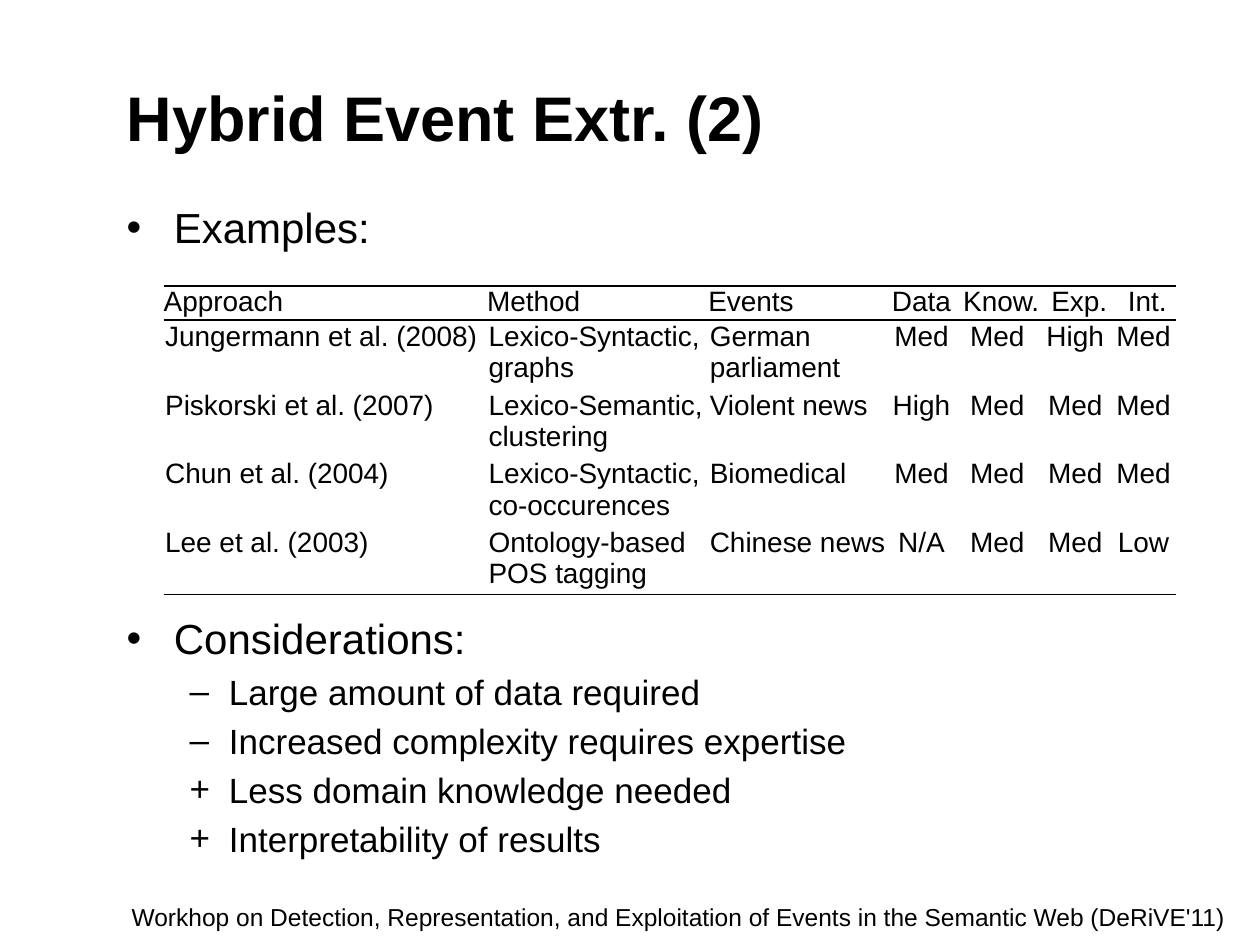
"""Build the slide on hybrid event extraction with its table of examples."""
from lxml.etree import SubElement
from pptx import Presentation
from pptx.dml.color import RGBColor
from pptx.enum.text import MSO_ANCHOR as Anchor, MSO_AUTO_SIZE as AutoSize, PP_ALIGN as Align
from pptx.oxml.ns import qn
from pptx.util import Cm, Pt


def place(shape, left, top, width, height):
    shape.left, shape.top, shape.width, shape.height = map(Cm, (left, top, width, height))


def set_font(text_part, size, color="000000", bold=False):
    font = text_part.font
    font.name, font.size, font.bold = "Arial", Pt(size), bold
    font.color.rgb = RGBColor.from_string(color)


presentation = Presentation()
presentation.slide_width, presentation.slide_height = Cm(25.4), Cm(19.05)
slide = presentation.slides.add_slide(presentation.slide_layouts[1])

title = slide.shapes.title
place(title, 2.3, 0.76, 21.84, 3.18)
title.text_frame.text = "Hybrid Event Extr. (2)"
title.text_frame.vertical_anchor = Anchor.MIDDLE
title.text_frame.auto_size = AutoSize.NONE
title.text_frame.paragraphs[0].alignment = Align.LEFT
set_font(title.text_frame.paragraphs[0], 36, bold=True)

bullets = [
    ("Examples:", 0, "•", 0),
    ("Considerations:", 0, "•", 206),
    ("Large amount of data required", 1, "–", 4),
    ("Increased complexity requires expertise", 1, "–", 4),
    ("Less domain knowledge needed", 1, "+", 4),
    ("Interpretability of results", 1, "+", 4),
]
body = slide.placeholders[1]
place(body, 2.3, 3.94, 21.84, 13.79)
body_frame = body.text_frame
body_frame.text = "\n".join(bullet[0] for bullet in bullets)
body_frame.auto_size = AutoSize.NONE
for paragraph, (_, level, symbol, space) in zip(body_frame.paragraphs, bullets):
    paragraph.level = level
    paragraph.space_before = Pt(space)
    indent, hanging = [(0.95, 0.95), (2.06, 0.79)][level]
    properties = paragraph._p.get_or_add_pPr()
    properties.set("marL", str(Cm(indent)))
    properties.set("indent", str(-Cm(hanging)))
    SubElement(properties, qn("a:buFont"), typeface="Arial")
    SubElement(properties, qn("a:buChar"), char=symbol)
    set_font(paragraph, 20 if level else 24)

footer = slide.shapes.add_textbox(Cm(2.18), Cm(18.06), Cm(23.01), Cm(0.61))
footer.text_frame.word_wrap = True
paragraph = footer.text_frame.paragraphs[0]
paragraph.text = (
    "Workhop on Detection, Representation, and Exploitation of Events "
    "in the Semantic Web (DeRiVE'11)"
)
paragraph.alignment = Align.CENTER
set_font(paragraph, 14)

rows = [
    ["Approach", "Method", "Events", "Data", "Know.", "Exp.", "Int."],
    ["Jungermann et al. (2008)", "Lexico-Syntactic, graphs", "German parliament",
     "Med", "Med", "High", "Med"],
    ["Piskorski et al. (2007)", "Lexico-Semantic, clustering", "Violent news",
     "High", "Med", "Med", "Med"],
    ["Chun et al. (2004)", "Lexico-Syntactic,\vco-occurences", "Biomedical",
     "Med", "Med", "Med", "Med"],
    ["Lee et al. (2003)", "Ontology-based POS tagging", "Chinese news",
     "N/A", "Med", "Med", "Low"],
]
column_widths = [6.52, 4.46, 3.61, 1.37, 1.69, 1.45, 1.3]
row_heights = [0.4] + [0.53] * 4
table = slide.shapes.add_table(
    len(rows), len(column_widths), Cm(3.3), Cm(5.77),
    Cm(sum(column_widths)), Cm(sum(row_heights)),
).table
table.first_row = table.horz_banding = False
for column, width in zip(table.columns, column_widths):
    column.width = Cm(width)
for row, height in zip(table.rows, row_heights):
    row.height = Cm(height)

for row_index, row in enumerate(rows):
    ruled_sides = {0: ("lnT", "lnB"), 1: ("lnT",), len(rows) - 1: ("lnB",)}.get(row_index, ())
    margin = Cm(0.03 if row_index else 0)
    for column_index, text in enumerate(row):
        cell = table.cell(row_index, column_index)
        cell.text = text
        cell.margin_left = cell.margin_right = cell.margin_top = margin
        cell.margin_bottom = 0
        paragraph = cell.text_frame.paragraphs[0]
        paragraph.alignment = Align.CENTER if column_index > 2 else Align.LEFT
        if text == "Know.":
            paragraph.alignment = Align.RIGHT
        elif text in ("Exp.", "Int."):
            cell.margin_left = Cm(0.16)
        set_font(paragraph, 16)
        for run in paragraph.runs:
            set_font(run, 16)
        cell_properties = cell._tc.get_or_add_tcPr()
        for side in ("lnL", "lnR", "lnT", "lnB"):
            border = SubElement(cell_properties, qn(f"a:{side}"), w=str(Pt(1)))
            if side in ruled_sides:
                SubElement(SubElement(border, qn("a:solidFill")), qn("a:srgbClr"), val="000000")
            else:
                SubElement(border, qn("a:noFill"))
        cell.fill.background()

presentation.save("out.pptx")
